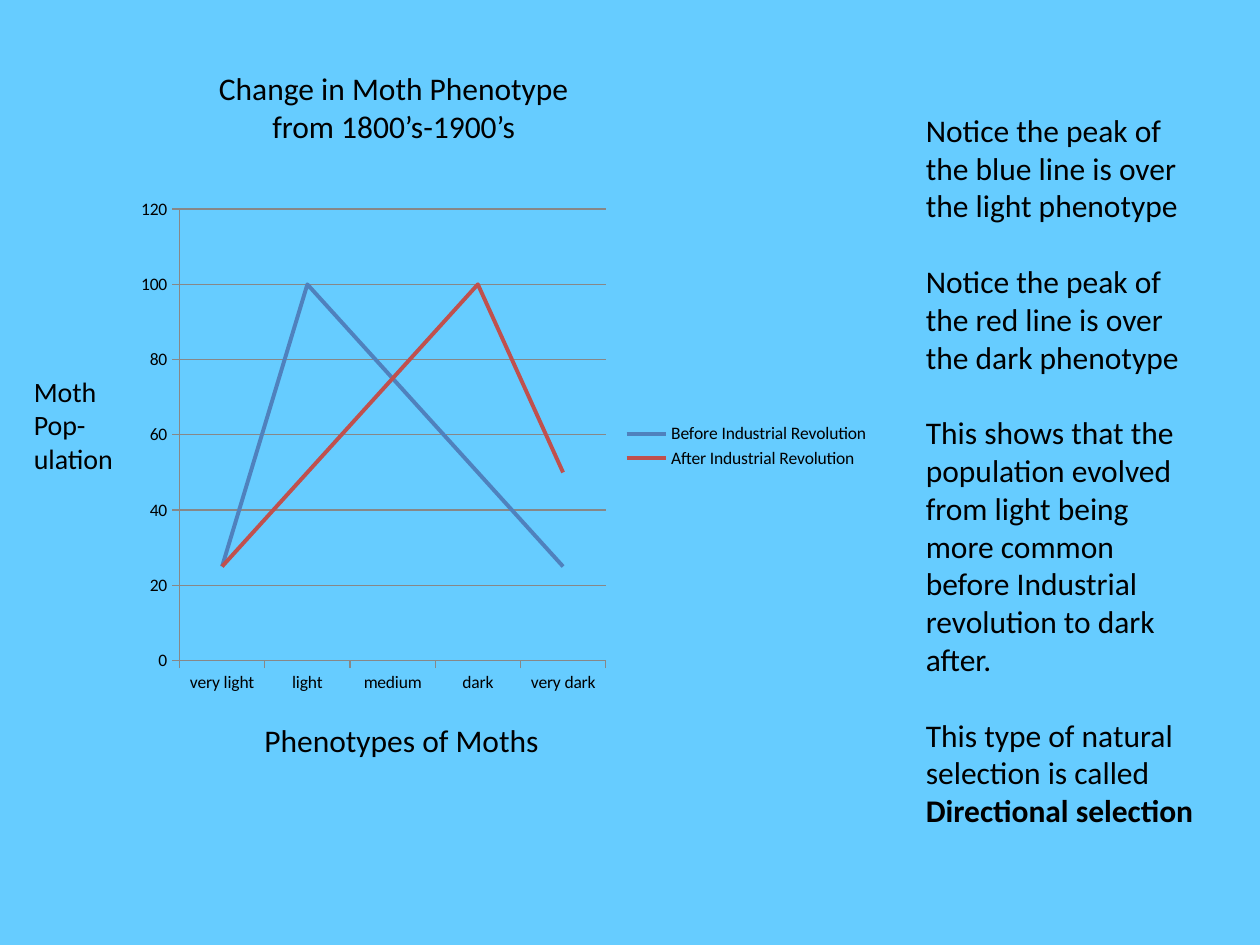
from pptx import Presentation, util as u
from pptx.chart.data import CategoryChartData
from pptx.dml.color import RGBColor
from pptx.enum import chart as ch, text

COLORS = {"sky": "66CCFF", "ink": "000000", "grid": "878787",
          "before": "4F81BD", "after": "C0504D"}
FONT = "Calibri"
CATEGORIES = ["very light", "light", "medium", "dark", "very dark"]
SERIES = [("Before Industrial Revolution", [25, 100, 75, 50, 25], "before"),
          ("After Industrial Revolution", [25, 50, 75, 100, 50], "after")]
# Each paragraph is a list of (words, bold) runs
NOTES = [
    [("Notice the peak of the blue line is over the light phenotype", False)],
    [("Notice the peak of the red line is over the dark phenotype", False)],
    [("This shows that the population evolved from light being more common "
      "before Industrial revolution to dark after.", False)],
    [("This type of natural selection is called ", False),
     ("Directional selection", True)],
]


def rgb(name):
    return RGBColor.from_string(COLORS[name])


def style_font(font, size, bold=False):
    formats = {"name": FONT, "size": u.Pt(size), "bold": bold}
    for key, value in formats.items():
        setattr(font, key, value)
    font.color.rgb = rgb("ink")


def style_line(line, color, width):
    line.color.rgb = rgb(color)
    line.width = u.Pt(width)


def add_text(s, box, paragraphs, size=18, align=text.PP_ALIGN.LEFT, gap=0):
    tf = s.shapes.add_textbox(*map(u.Inches, box)).text_frame
    tf.word_wrap = True
    for i, runs in enumerate(paragraphs):
        p = tf.add_paragraph() if i else tf.paragraphs[0]
        p.alignment = align
        if i:
            p.space_before = u.Pt(gap)
        for words, bold in runs:
            r = p.add_run()
            r.text = words
            style_font(r.font, size, bold)


def add_moth_chart(s, box):
    data = CategoryChartData()
    data.categories = CATEGORIES
    for name, values, _ in SERIES:
        data.add_series(name, values)
    chart = s.shapes.add_chart(ch.XL_CHART_TYPE.LINE,
                               *map(u.Inches, box), data).chart
    chart.has_title = False
    style_font(chart.font, 10)

    # Legend
    chart.has_legend = True
    chart.legend.position = ch.XL_LEGEND_POSITION.RIGHT
    chart.legend.include_in_layout = False

    # Axes and gridlines
    for axis in (chart.category_axis, chart.value_axis):
        axis.major_tick_mark = ch.XL_TICK_MARK.OUTSIDE
        axis.minor_tick_mark = ch.XL_TICK_MARK.NONE
        style_line(axis.format.line, "grid", 0.75)
    chart.category_axis.has_major_gridlines = False
    chart.value_axis.has_major_gridlines = True
    style_line(chart.value_axis.major_gridlines.format.line, "grid", 0.75)

    # Lines
    chart.plots[0].vary_by_categories = False
    for series, (_, _, color) in zip(chart.plots[0].series, SERIES):
        series.smooth = False
        series.marker.style = ch.XL_MARKER_STYLE.NONE
        style_line(series.format.line, color, 2.25)


def add_chart_region(s, x, y):
    """Chart with its title and axis captions."""
    add_moth_chart(s, (x + 0.83, y + 1, 6, 4.08))
    add_text(s, (x + 1.83, y + 5.17, 2.5, 0.4),
             [[("Phenotypes of Moths", False)]])
    add_text(s, (x, y + 2.42, 0.83, 0.91), [[("Moth Pop-ulation", False)]], 16)
    add_text(s, (x + 1.33, y, 3.25, 0.71),
             [[("Change in Moth Phenotype from 1800’s-1900’s", False)]],
             align=text.PP_ALIGN.CENTER)


def main():
    prs = Presentation()
    prs.slide_width, prs.slide_height = u.Inches(10), u.Inches(7.5)
    s = prs.slides.add_slide(prs.slide_layouts[6])
    s.background.fill.solid()
    s.background.fill.fore_color.rgb = rgb("sky")
    add_chart_region(s, 0.17, 0.5)
    # Explanation column, one line apart
    add_text(s, (7.25, 0.83, 2.33, 5.86), NOTES, gap=21.6)
    prs.save("out.pptx")


if __name__ == "__main__":
    main()
